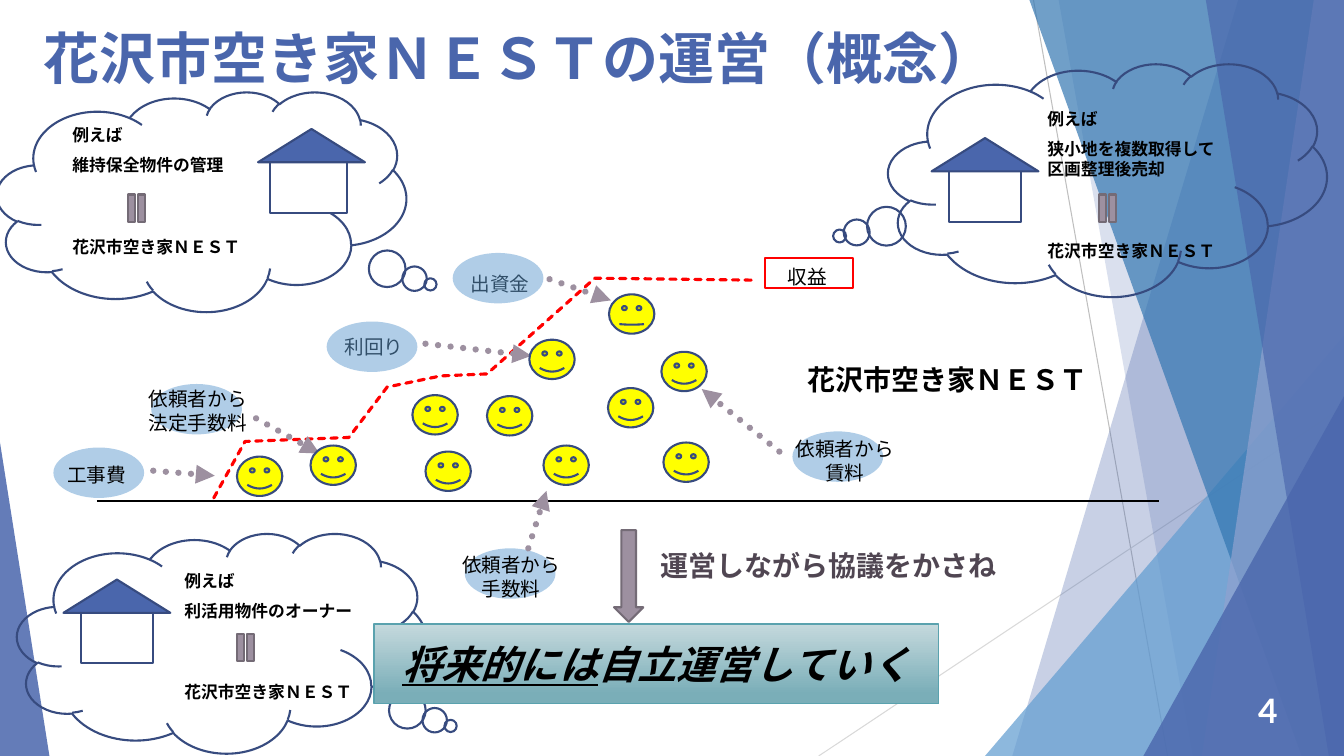
import lxml.etree
import pptx
import pptx.dml.color
import pptx.enum.dml
import pptx.enum.lang
import pptx.enum.shapes
import pptx.enum.text
import pptx.oxml.ns
import pptx.util

SCALE = 9144
FONT = "Lato"
HEX = {
    "blue": "4A66AC", "navy": "374B7F", "sky": "629DD1", "deep": "3477B2",
    "pale": "90A2CF", "mauve": "9D90A0", "plum": "746B76", "dusk": "504652",
    "mist": "C5D9DD", "teal": "7AAEB8", "edge": "5AA2AE", "gray": "BFBFBF",
    "light": "D9D9D9", "white": "FFFFFF", "black": "000000", "red": "FF0000",
    "yellow": "FFFF00",
}
KIND = pptx.enum.shapes.MSO_SHAPE
DASH = pptx.enum.dml.MSO_LINE
ALIGN = pptx.enum.text.PP_ALIGN
ANCHOR = pptx.enum.text.MSO_ANCHOR
GROUP = "花沢市空き家ＮＥＳＴ"


def px(*nums):
    return [round(n * SCALE) for n in nums]


def tint(name):
    return pptx.dml.color.RGBColor.from_string(HEX[name])


def extend(node, tag, **attrs):
    return lxml.etree.SubElement(node, pptx.oxml.ns.qn(tag), **attrs)


def stroke(shape, color, width, dash=None):
    shape.line.color.rgb = tint(color)
    shape.line.width = pptx.util.Pt(width)
    if dash:
        shape.line.dash_style = dash
        shape.element.spPr.find(pptx.oxml.ns.qn("a:ln")).set("cap", "rnd")


def paint(shape, fill=None, line=None, width=1.5, alpha=None, dash=None):
    shape.shadow.inherit = False
    if fill:
        shape.fill.solid()
        shape.fill.fore_color.rgb = tint(fill)
        if alpha:
            solid = shape.element.spPr.find(pptx.oxml.ns.qn("a:solidFill"))
            extend(solid[0], "a:alpha", val=str(alpha * 1000))
    else:
        shape.fill.background()
    if line:
        stroke(shape, line, width, dash)
    else:
        shape.line.fill.background()


def draw(slide, kind, box, adj=(), turn=0, **look):
    shape = slide.shapes.add_shape(kind, *px(*box))
    for i, val in enumerate(adj):
        shape.adjustments[i] = val
    shape.rotation = turn
    paint(shape, **look)
    return shape


def trace(slide, points, close=True, **look):
    pen = slide.shapes.build_freeform(*points[0], scale=SCALE)
    pen.add_line_segments(points[1:], close=close)
    paint(pen.convert_to_shape(), **look)


def link(slide, ends, color, width, dash=None, arrow=False):
    line = slide.shapes.add_connector(
        pptx.enum.shapes.MSO_CONNECTOR.STRAIGHT, *px(*ends))
    stroke(line, color, width, dash)
    props = line.element.spPr
    if arrow:
        extend(props.find(pptx.oxml.ns.qn("a:ln")), "a:tailEnd", type="triangle")
    extend(props, "a:effectLst")


def write(frame, text, size=14, color="black", bold=False, slant=False,
          under="", align=ALIGN.LEFT, anchor=ANCHOR.TOP, gaps=()):
    frame.word_wrap = True
    frame.auto_size = pptx.enum.text.MSO_AUTO_SIZE.NONE
    frame.vertical_anchor = anchor
    for i, row in enumerate(text.split("\n")):
        para = frame.paragraphs[0] if i == 0 else frame.add_paragraph()
        para.alignment = align
        if i < len(gaps):
            para.space_before = pptx.util.Pt(gaps[i])
        for part in filter(None, (under, row)):
            run = para.add_run()
            run.text = part
            font = run.font
            font.name = FONT
            font.size = pptx.util.Pt(size)
            font.bold, font.italic = bold, slant
            font.underline = bool(under) and part == under
            font.color.rgb = tint(color)
            font.language_id = pptx.enum.lang.MSO_LANGUAGE_ID.JAPANESE


def note(slide, box, text, **look):
    write(slide.shapes.add_textbox(*px(*box)).text_frame, text, **look)


def back(slide, box):
    x, y, w, h = box
    r, b = x + w, y + h
    link(slide, (x + 1025, y, x + 1158, b), "gray", 0.75)
    link(slide, (r, y + 403, x + 812, b), "light", 0.75)

    def band(top, low, fill, alpha):
        trace(slide, [(x + top, y), (r, y), (r, b), (x + low, b)],
              fill=fill, alpha=alpha)

    def wedge(left, top, wide, adj, fill, alpha):
        draw(slide, KIND.ISOSCELES_TRIANGLE, (x + left, y + top, wide, h - top),
             (adj,), fill=fill, alpha=alpha)

    band(1228, 1004, "blue", 30)
    band(1050, 1183, "blue", 20)
    wedge(977, 333, 356, 1, "sky", 72)
    band(1021, 1291, "deep", 70)
    band(1303, 1192, "pale", 70)
    band(1196, 1318, "blue", 65)
    wedge(1134, 393, 199, 1, "blue", 80)
    wedge(0, 439, 49, 0, "blue", 85)


def house(slide, box, inset):
    x, y, w, h = box
    left, wide = inset
    draw(slide, KIND.RECTANGLE, (x + left, y + 33, wide, h - 33),
         fill="white", line="navy")
    draw(slide, KIND.ISOSCELES_TRIANGLE, (x, y, w, 33), fill="blue", line="navy")


def cloud(slide, box, tail, roof, inset, words, sign, text, gaps):
    x, y, w, h = box
    draw(slide, KIND.CLOUD_CALLOUT, box, tail, line="navy")
    house(slide, (x + roof[0], y + roof[1], 106, 83), inset)
    note(slide, (x + words[0], y + words[1], 223, 162), text,
         size=12, bold=True, gaps=gaps)
    draw(slide, KIND.MATH_EQUAL, (x + sign[0], y + sign[1], 37, 29),
         turn=270, fill="mauve", line="plum")


def label(slide, box, text, shift, ends, under=False):
    x, y, w, h = box
    spot = (x + shift[0], y + shift[1], 154, 57 if "\n" in text else 34)
    if under:
        note(slide, spot, text, align=ALIGN.CENTER)
    draw(slide, KIND.OVAL, box, fill="sky", alpha=50)
    if not under:
        note(slide, spot, text, align=ALIGN.CENTER)
    link(slide, ends, "mauve", 4.5, DASH.ROUND_DOT, True)


def graph(slide, box):
    x, y, w, h = box
    link(slide, (x, y + h, x + w, y + h), "black", 2)
    steps = [(116, 243), (147, 187), (250, 183), (288, 133),
             (341, 122), (387, 120), (494, 25), (655, 27)]
    trace(slide, [(x + a, y + b) for a, b in steps], close=False,
          line="red", width=2.25, dash=DASH.SQUARE_DOT)
    labels = [
        ((-43, 193), "工事費", (-34, 10), (56, 216, 117, 221), False),
        ((365, 293), "依頼者から\n手数料", (-31, 0), (428, 293, 446, 236), False),
        ((54, 130), "依頼者から\n法定手数料", (-31, -2), (158, 164, 221, 199), False),
        ((690, 177), "依頼者から\n賃料", (-25, 1), (677, 197, 600, 135), False),
        ((228, 68), "利回り", (-30, 8), (326, 90, 431, 102), True),
        ((353, 0), "出資金", (-30, 14), (449, 26, 510, 47), True),
    ]
    for (a, b), text, shift, ends, under in labels:
        move = [n + (y if i % 2 else x) for i, n in enumerate(ends)]
        label(slide, (x + a, y + b, 90, 50), text, shift, move, under)
    faces = [(560, 98), (139, 202), (212, 191), (443, 191), (508, 41), (429, 86),
             (313, 141), (326, 197), (387, 142), (507, 134), (562, 188)]
    for a, b in faces:
        adj = (0.007,) if (a, b) == (508, 41) else ()
        draw(slide, KIND.SMILEY_FACE, (x + a, y + b, 45, 39), adj,
             fill="yellow", line="navy")
    note(slide, (x + 648, y + 7, 113, 34), "収益", align=ALIGN.CENTER)
    draw(slide, KIND.RECTANGLE, (x + 663, y + 5, 87, 30), line="red")
    note(slide, (x + 695, y + 104, 309, 44), GROUP, size=20, bold=True)


def goal(slide, box):
    x, y, w, h = box
    draw(slide, KIND.RIGHT_ARROW, (x + 207, y - 62, 91, 29),
         turn=90, fill="mauve", line="plum")
    note(slide, (x + 274, y - 80, 369, 44), "運営しながら協議をかさね",
         size=20, color="dusk", bold=True)
    banner = draw(slide, KIND.RECTANGLE, box, line="edge", width=1)
    banner.fill.gradient()
    banner.fill.gradient_angle = 270
    for stop, name, place in zip(banner.fill.gradient_stops, ("mist", "teal"), (0, 0.88)):
        stop.color.rgb = tint(name)
        stop.position = place
    write(banner.text_frame, "自立運営していく", under="将来的には", size=28,
          bold=True, slant=True, align=ALIGN.CENTER, anchor=ANCHOR.MIDDLE)


def head(slide, box):
    title = slide.shapes.title
    title.left, title.top, title.width, title.height = px(*box)
    write(title.text_frame, f"{GROUP}の運営（概念）",
          size=40, color="blue", bold=True)


def main():
    deck = pptx.Presentation()
    deck.slide_width, deck.slide_height = px(1333, 750)
    slide = deck.slides.add_slide(deck.slide_layouts[5])
    back(slide, (0, 0, 1333, 750))
    head(slide, (33, 18, 969, 86))
    cloud(slide, (17, 529, 406, 218), (0.559, 0.377), (46, 46), (17, 72),
          (156, 32), (208, 99), f"例えば\n利活用物件のオーナー\n{GROUP}", (0, 7, 44))
    cloud(slide, (881, 63, 435, 231), (-0.611, 0.241), (43, 74), (17, 72),
          (148, 40), (199, 129),
          f"例えば\n狭小地を複数取得して\n区画整理後売却\n{GROUP}", (0, 7, 0, 44))
    cloud(slide, (-3, 91, 406, 218), (0.559, 0.377), (259, 37), (12, 76),
          (65, 28), (120, 101), f"例えば\n維持保全物件の管理\n{GROUP}", (0, 7, 44))
    goal(slide, (371, 619, 560, 79))
    graph(slide, (96, 251, 1054, 246))
    note(slide, (1206, 685, 103, 38), "4", size=24, color="white", bold=True,
         align=ALIGN.CENTER, anchor=ANCHOR.MIDDLE)
    deck.save("out.pptx")


if __name__ == "__main__":
    main()
